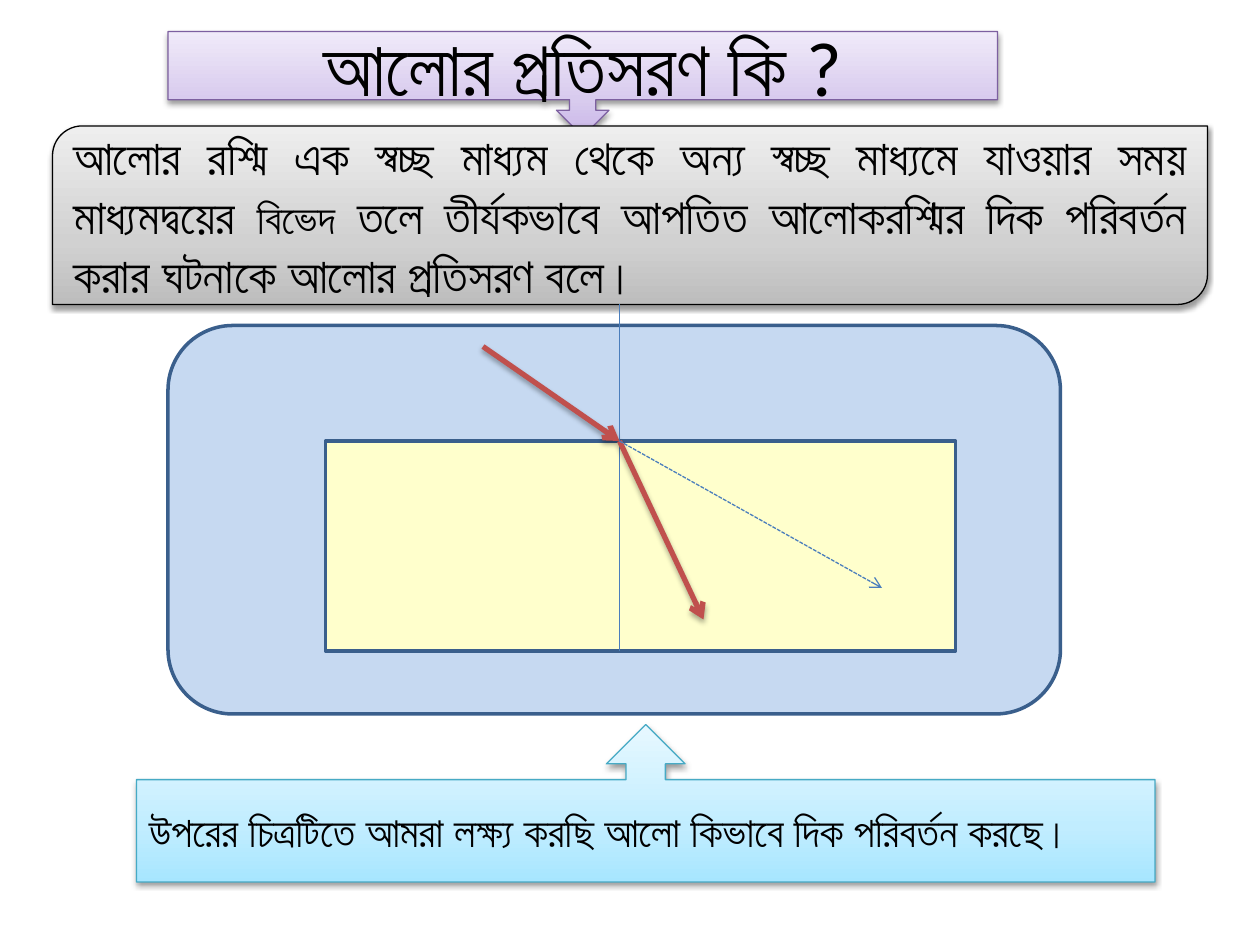
from lxml.etree import SubElement
from pptx import Presentation
from pptx.dml.color import RGBColor
from pptx.enum.dml import MSO_LINE_DASH_STYLE as Dash
from pptx.enum.shapes import MSO_CONNECTOR as Connector, MSO_SHAPE as Shape
from pptx.enum.text import MSO_ANCHOR as Anchor, PP_ALIGN as Align
from pptx.oxml.ns import qn
from pptx.util import Pt

PX = 7620
FONT = "Calibri"
BLACK = RGBColor(0x00, 0x00, 0x00)
PURPLE = RGBColor(0x7D, 0x60, 0xA0)
PURPLE_FADE = [RGBColor(0xC9, 0xB5, 0xE8), RGBColor(0xD8, 0xCB, 0xEE), RGBColor(0xF0, 0xEA, 0xF9)]
GREY_FADE = [RGBColor(0xBD, 0xBD, 0xBD), RGBColor(0xD1, 0xD1, 0xD1), RGBColor(0xEE, 0xEE, 0xEE)]
AQUA = RGBColor(0x46, 0xAA, 0xC5)
AQUA_FADE = [RGBColor(0xA7, 0xE6, 0xFF), RGBColor(0xC1, 0xED, 0xFF), RGBColor(0xE7, 0xF8, 0xFF)]
AIR = RGBColor(0xC6, 0xD9, 0xF1)
GLASS = RGBColor(0xFF, 0xFF, 0xCC)
EDGE = RGBColor(0x3A, 0x5F, 0x8C)
GUIDE = RGBColor(0x4B, 0x7E, 0xBC)
RAY = RGBColor(0xC0, 0x50, 0x4D)


def add_element(parent, tag, **attributes):
    return SubElement(parent, qn(tag), {key: str(value) for key, value in attributes.items()})


def add_color(parent, color, **modifiers):
    node = add_element(parent, "a:srgbClr", val=color)
    for name, value in modifiers.items():
        add_element(node, f"a:{name}", val=value)


def add_shadow(effects, distance, alpha):
    shadow = add_element(effects, "a:outerShdw", blurRad=40000, dist=distance,
                         dir=5400000, rotWithShape=0)
    add_color(shadow, BLACK, alpha=alpha)


def add_outlined(shapes, kind, box, outline, width):
    shape = shapes.add_shape(kind, *(length * PX for length in box))
    shape.shadow.inherit = False
    shape.line.color.rgb = outline
    shape.line.width = Pt(width)
    return shape


def fade(shape, colors):
    shape.fill.gradient()
    shape.fill.gradient_angle = 90
    stops = shape.element.spPr.find(qn("a:gradFill")).find(qn("a:gsLst"))
    for stop in list(stops):
        stops.remove(stop)
    for position, color in zip((0, 35000, 100000), colors):
        add_color(add_element(stops, "a:gs", pos=position), color)


def add_panel(shapes, kind, box, colors, outline, align, runs):
    panel = add_outlined(shapes, kind, box, outline, 0.75)
    fade(panel, colors)
    add_shadow(panel.element.spPr.find(qn("a:effectLst")), 20000, 38000)
    frame = panel.text_frame
    frame.word_wrap = True
    frame.vertical_anchor = Anchor.MIDDLE
    paragraph = frame.paragraphs[0]
    paragraph.alignment = align
    for text, size in runs:
        run = paragraph.add_run()
        run.text = text
        run.font.name = FONT
        run.font.size = Pt(size)
        run.font.color.rgb = BLACK


def add_line(shapes, start, end, color, width, arrow=False, dash=None, shadow=False):
    line = shapes.add_connector(Connector.STRAIGHT, *(length * PX for length in start + end))
    line.line.color.rgb = color
    line.line.width = Pt(width)
    if dash:
        line.line.dash_style = dash
    properties = line.element.spPr
    if arrow:
        add_element(properties.find(qn("a:ln")), "a:tailEnd", type="arrow")
    effects = add_element(properties, "a:effectLst")
    if shadow:
        add_shadow(effects, 23000, 35000)


def add_heading(shapes, box):
    add_panel(shapes, Shape.DOWN_ARROW_CALLOUT, box, PURPLE_FADE, PURPLE, Align.CENTER,
              [("আলোর প্রতিসরণ কি ?", 44)])


def add_definition(shapes, box):
    add_panel(shapes, Shape.ROUND_2_DIAG_RECTANGLE, box, GREY_FADE, BLACK, Align.JUSTIFY, [
        ("আলোর রশ্মি এক স্বচ্ছ মাধ্যম থেকে অন্য স্বচ্ছ মাধ্যমে যাওয়ার সময় মাধ্যমদ্বয়ের ", 28),
        ("বিভেদ", 24),
        (" তলে তীর্যকভাবে আপতিত আলোকরশ্মির দিক পরিবর্তন করার ঘটনাকে আলোর প্রতিসরণ বলে।", 28),
    ])


def add_media(shapes, box):
    left, top, width, height = box
    glass_box = (left + 150, top + 110, 600, 200)
    for kind, area, color in ((Shape.ROUNDED_RECTANGLE, box, AIR),
                              (Shape.RECTANGLE, glass_box, GLASS)):
        medium = add_outlined(shapes, kind, area, EDGE, 2)
        medium.fill.solid()
        medium.fill.fore_color.rgb = color
    add_line(shapes, (left + 430, top - 20), (left + 430, top + 310), GUIDE, 0.75)


def add_rays(shapes, box):
    left, top, width, height = box
    incidence = (left + 430, top + 110)
    rays = shapes.add_group_shape().shapes
    for start, end in (((left + 300, top + 20), incidence),
                       (incidence, (left + 510, top + 280))):
        add_line(rays, start, end, RAY, 3, arrow=True, shadow=True)
    add_line(shapes, incidence, (left + 680, top + 250), GUIDE, 0.75,
             arrow=True, dash=Dash.SQUARE_DOT)


def add_observation(shapes, box):
    add_panel(shapes, Shape.UP_ARROW_CALLOUT, box, AQUA_FADE, AQUA, Align.LEFT,
              [("উপরের চিত্রটিতে আমরা লক্ষ্য করছি আলো কিভাবে দিক পরিবর্তন করছে।", 24)])


def main():
    deck = Presentation()
    deck.slide_width = 1200 * PX
    deck.slide_height = 900 * PX
    shapes = deck.slides.add_slide(deck.slide_layouts[6]).shapes
    diagram = (160, 310, 850, 370)
    add_heading(shapes, (160, 30, 790, 100))
    add_definition(shapes, (50, 120, 1100, 170))
    add_media(shapes, diagram)
    add_observation(shapes, (130, 690, 970, 150))
    add_rays(shapes, diagram)
    deck.save("out.pptx")


if __name__ == "__main__":
    main()
